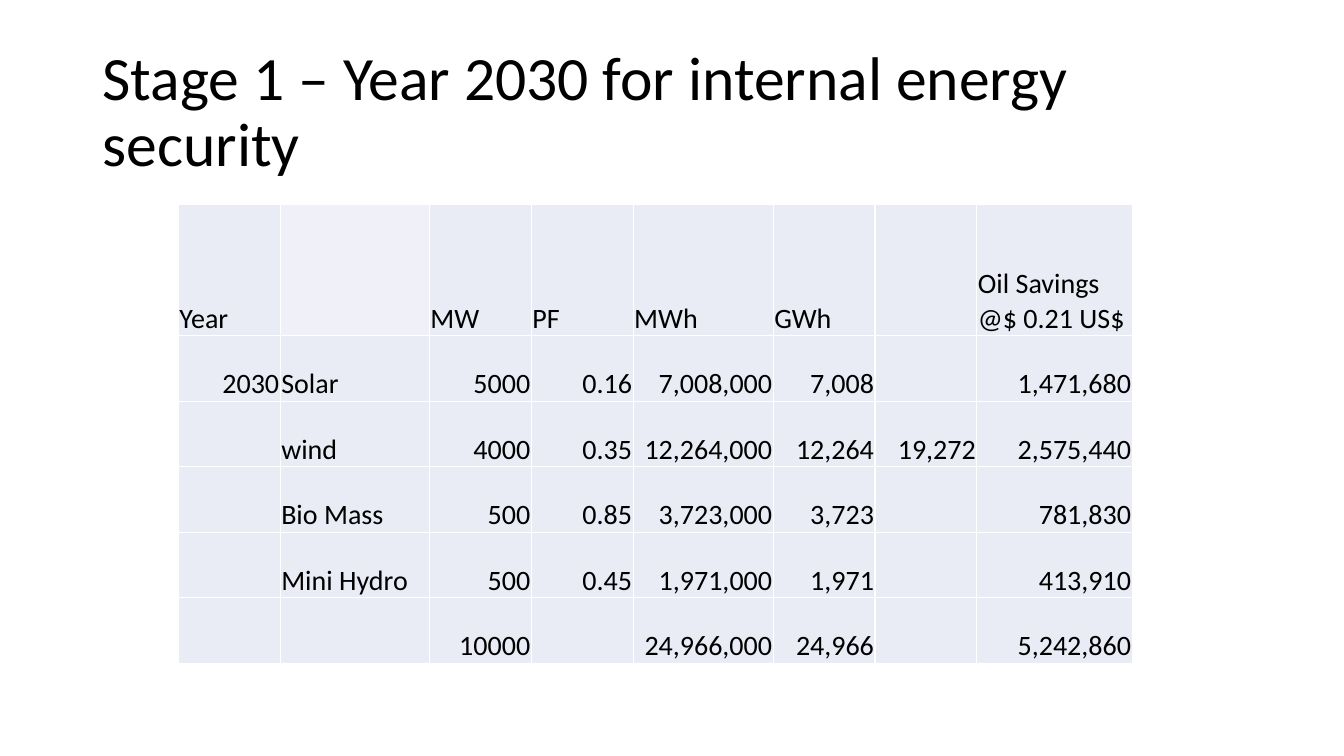
from lxml import etree
from pptx import Presentation, util as u
from pptx.dml.color import RGBColor
from pptx.enum import text
from pptx.oxml import ns

INK, PALE, WHITE = "000000", "E9EBF5", "FFFFFF"
WIDTHS = [1.01, 1.48, 1.01, 1.01, 1.39, 1.01, 1.01, 1.54]
HEIGHTS = [1.3] + [0.65] * 5
ROWS = [
    ["Year", "", "MW", "PF", "MWh", "GWh", "", "Oil Savings @$ 0.21 US$"],
    ["2030", "Solar", "5000", "0.16", "7,008,000", "7,008", "", "1,471,680"],
    ["", "wind", "4000", "0.35", "12,264,000", "12,264", "19,272", "2,575,440"],
    ["", "Bio Mass", "500", "0.85", "3,723,000", "3,723", "", "781,830"],
    ["", "Mini Hydro", "500", "0.45", "1,971,000", "1,971", "", "413,910"],
    ["", "", "10000", "", "24,966,000", "24,966", "", "5,242,860"],
]


def color(code):
    """Turn a hex string into a colour."""
    return RGBColor.from_string(code)


def assign(item, form):
    """Set each attribute named in a dict of format values."""
    for name, value in form.items():
        setattr(item, name, value)


def write(frame, words, size, **form):
    """Write one formatted paragraph into a text frame."""
    par = frame.paragraphs[0]
    assign(par, form)
    run = par.add_run()
    run.text = words
    assign(run.font, {"name": "Calibri", "size": u.Pt(size)})
    run.font.color.rgb = color(INK)


def add_title(slide, words):
    """Add the slide title."""
    box = slide.shapes.add_textbox(*map(u.Inches, (0.92, 0.4, 11.5, 1.45)))
    assign(box.text_frame, {"word_wrap": True,
                            "vertical_anchor": text.MSO_ANCHOR.MIDDLE})
    write(box.text_frame, words, 44, line_spacing=0.9)


def add_edges(cell):
    """Draw thin white lines on all sides of a cell."""
    props = cell._tc.get_or_add_tcPr()
    for side in "LRTB":
        line = etree.SubElement(props, ns.qn(f"a:ln{side}"), w=str(u.Pt(1)))
        fill = etree.SubElement(line, ns.qn("a:solidFill"))
        etree.SubElement(fill, ns.qn("a:srgbClr"), val=WHITE)


def paint(cell, code, alpha=100):
    """Fill a cell, with an opacity in percent."""
    cell.fill.solid()
    cell.fill.fore_color.rgb = color(code)
    if alpha < 100:
        tone = next(cell._tc.tcPr.find(ns.qn("a:solidFill")).iterchildren())
        etree.SubElement(tone, ns.qn("a:alpha"), val=str(alpha * 1000))


def fill_cell(cell, words):
    """Style a cell and write its words, with numbers to the right."""
    add_edges(cell)
    paint(cell, PALE)
    if words:
        edge = u.Inches(0.01)
        assign(cell, {"margin_left": edge, "margin_right": edge,
                      "margin_top": edge, "margin_bottom": 0,
                      "vertical_anchor": text.MSO_ANCHOR.BOTTOM})
        side = text.PP_ALIGN.RIGHT if words[0].isdigit() else text.PP_ALIGN.LEFT
        write(cell.text_frame, words, 20, alignment=side)


def add_grid(slide):
    """Add the table of energy sources."""
    area = map(u.Inches, (1.77, 2.03, sum(WIDTHS), sum(HEIGHTS)))
    grid = slide.shapes.add_table(len(ROWS), len(WIDTHS), *area).table
    assign(grid, {"first_row": False, "horz_banding": False})
    for col, width in zip(grid.columns, WIDTHS):
        col.width = u.Inches(width)
    for row, height, line in zip(grid.rows, HEIGHTS, ROWS):
        row.height = u.Inches(height)
        for cell, words in zip(row.cells, line):
            fill_cell(cell, words)
    paint(grid.cell(0, 1), PALE, 67)


def main():
    """Build and save the slide."""
    deck = Presentation()
    assign(deck, {"slide_width": u.Inches(13.33), "slide_height": u.Inches(7.5)})
    slide = deck.slides.add_slide(deck.slide_layouts[6])
    add_title(slide, "Stage 1 – Year 2030 for internal energy security")
    add_grid(slide)
    deck.save("out.pptx")


if __name__ == "__main__":
    main()
